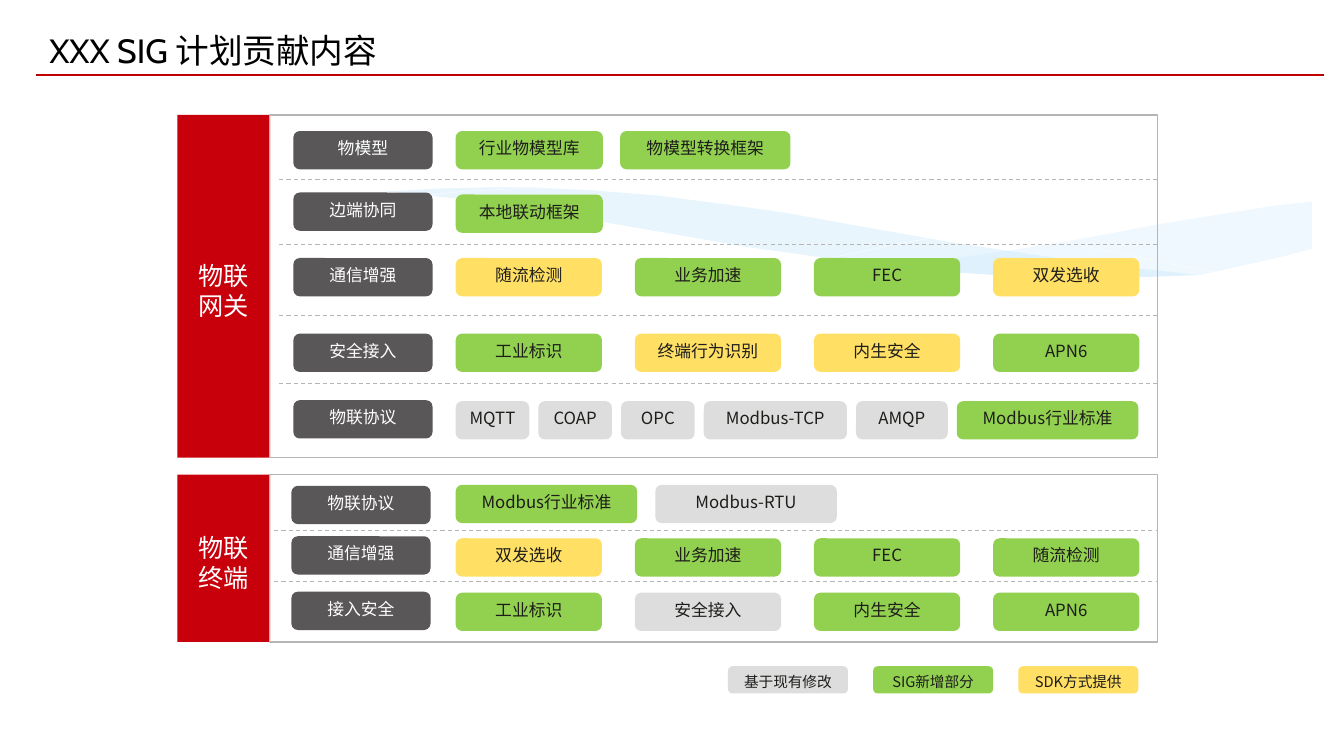
from lxml.etree import SubElement
from pptx import Presentation
from pptx.dml.color import RGBColor
from pptx.enum.dml import MSO_LINE
from pptx.enum.shapes import MSO_CONNECTOR, MSO_SHAPE
from pptx.enum.text import MSO_ANCHOR, PP_ALIGN
from pptx.oxml.ns import qn
from pptx.util import Inches, Pt

THEME = {
    "red": "C7000B", "rule": "C00000", "label": "595757", "border": "B5B5B5",
    "existing": "DDDDDD", "new": "92D050", "sdk": "FFDF64", "wave": "C6E7FC",
    "white": "FFFFFF", "ink": "1D1D1A", "black": "000000",
    "title_size": 24, "group_size": 18, "pill_size": 12, "legend_size": 10.5,
    "font": "Noto Sans CJK SC", "title_font": "Cabin",
}

# Grid: group column, panel, label column and item columns
GROUP_LEFT, PANEL_LEFT, PANEL_RIGHT = 1.76, 2.67, 11.48
ITEM_LEFT, ITEM_RIGHT, ITEM_WIDTH = 4.52, 11.3, 1.45
ITEM_GAP = (ITEM_RIGHT - ITEM_LEFT - 4 * ITEM_WIDTH) / 3
LABEL_WIDTH, PILL_HEIGHT = 1.38, 0.38

presentation = Presentation()
presentation.slide_width, presentation.slide_height = Inches(13.33), Inches(7.5)
slide = presentation.slides.add_slide(presentation.slide_layouts[6])


def add_block(kind, box, fill, text, size, color="ink", font="font"):
    """Add a text box (kind None) or a filled shape with styled text."""
    box = [Inches(length) for length in box]
    if kind is None:
        shape = slide.shapes.add_textbox(*box)
    else:
        shape = slide.shapes.add_shape(kind, *box)
        shape.shadow.inherit = False
        shape.fill.solid()
        shape.fill.fore_color.rgb = RGBColor.from_string(THEME[fill])
        shape.line.fill.background()
    frame = shape.text_frame
    frame.text = text
    frame.word_wrap = True
    frame.vertical_anchor = MSO_ANCHOR.TOP
    for paragraph in frame.paragraphs:
        paragraph.alignment = PP_ALIGN.LEFT if kind is None else PP_ALIGN.CENTER
        for run in paragraph.runs:
            run.font.size = Pt(THEME[size])
            run.font.name = THEME[font]
            run.font.color.rgb = RGBColor.from_string(THEME[color])
            SubElement(run.font._element, qn("a:ea"), typeface=THEME["font"])
    return shape


def add_rule(left, right, top, color, width):
    """Add a horizontal line."""
    line = slide.shapes.add_connector(
        MSO_CONNECTOR.STRAIGHT, Inches(left), Inches(top), Inches(right), Inches(top))
    SubElement(line._element.spPr, qn("a:effectLst"))
    line.line.color.rgb = RGBColor.from_string(THEME[color])
    line.line.width = Pt(width)
    return line


# Background waves: both bands rest on the same lower edge
lower_edge = [
    (0.31, 2.13), (0.61, 2.03), (1.13, 1.93), (1.76, 1.86), (2.35, 1.84), (3.06, 1.85),
    (3.82, 1.9), (4.53, 1.97), (5.21, 2.07), (5.96, 2.2), (6.71, 2.33), (7.4, 2.45),
    (8.04, 2.54), (8.82, 2.65), (9.44, 2.7), (10.15, 2.75), (10.78, 2.77), (11.34, 2.75),
    (11.9, 2.73), (12.4, 2.62), (12.79, 2.53), (13.01, 2.47)]
right_band = lower_edge[13:] + [
    (13.01, 2), (12.65, 2.04), (12.08, 2.13), (11.47, 2.23), (10.73, 2.37),
    (10.05, 2.48), (9.41, 2.57)]
left_band = lower_edge[6:19] + [
    (11.16, 2.65), (10.34, 2.54), (9.41, 2.4), (8.39, 2.22), (7.78, 2.11), (7.21, 2.03),
    (6.52, 1.94), (5.89, 1.89), (5.32, 1.86), (4.82, 1.86), (4.37, 1.87)]
left_streak = [
    (4.12, 1.95), (4.58, 1.9), (5.16, 1.87), (5.77, 1.87), (6.52, 1.9), (7.42, 1.97),
    (8.11, 2.04), (8.86, 2.13), (9.7, 2.26), (10.6, 2.41), (11.58, 2.61), (12.1, 2.71)]
right_streak = [
    (8.18, 2.57), (8.96, 2.41), (9.97, 2.23), (10.75, 2.1), (11.55, 1.99),
    (12.32, 1.9), (13, 1.85)]
ground = lower_edge + [(13.01, 3.29), (0.31, 3.29)]

for points, fill, opacity in [
        (right_band, "wave", 29), (left_band, "wave", 40),
        (left_streak, None, 100), (right_streak, None, 100), (ground, "white", 100)]:
    points = [(Inches(x), Inches(y)) for x, y in points]
    builder = slide.shapes.build_freeform(*points[0])
    builder.add_line_segments(points[1:], close=fill is not None)
    wave = builder.convert_to_shape()
    wave.shadow.inherit = False
    if fill is None:
        wave.fill.background()
        wave.line.color.rgb = RGBColor.from_string(THEME["white"])
        wave.line.width = Pt(0.25)
    else:
        wave.fill.solid()
        wave.fill.fore_color.rgb = RGBColor.from_string(THEME[fill])
        wave.line.fill.background()
        color = wave._element.spPr.find(qn("a:solidFill"))[0]
        SubElement(color, qn("a:alpha"), val=str(opacity * 1000))

# Title
add_rule(0.36, 13.13, 0.74, "rule", 1.5)
add_block(None, (0.39, 0.25, 6.82, 0.5), None, "XXX SIG 计划贡献内容",
          "title_size", "black", "title_font")

# Groups: name, top, height, label left, divider left, divider tops, rows
# Row: label, label top, item top, gap, items (text, kind, width)
W = ITEM_WIDTH
groups = [
    ("物联\n网关", 1.14, 3.4, 2.91, 2.77, [1.78, 2.43, 3.13, 3.8], [
        ("物模型", 1.3, 1.3, 0.17,
         [("行业物模型库", "new", 1.46), ("物模型转换框架", "new", 1.69)]),
        ("边端协同", 1.91, 1.93, ITEM_GAP, [("本地联动框架", "new", 1.46)]),
        ("通信增强", 2.56, 2.56, ITEM_GAP,
         [("随流检测", "sdk", W), ("业务加速", "new", W),
          ("FEC", "new", W), ("双发选收", "sdk", W)]),
        ("安全接入", 3.31, 3.31, ITEM_GAP,
         [("工业标识", "new", W), ("终端行为识别", "sdk", W),
          ("内生安全", "sdk", W), ("APN6", "new", W)]),
        ("物联协议", 3.97, 3.98, 0.09,
         [("MQTT", "existing", 0.73), ("COAP", "existing", 0.73),
          ("OPC", "existing", 0.73), ("Modbus-TCP", "existing", 1.42),
          ("AMQP", "existing", 0.91), ("Modbus行业标准", "new", 1.8)]),
    ]),
    ("物联\n终端", 4.71, 1.66, 2.89, 2.72, [5.26, 5.77], [
        ("物联协议", 4.82, 4.81, 0.18,
         [("Modbus行业标准", "new", 1.8), ("Modbus-RTU", "existing", 1.8)]),
        ("通信增强", 5.32, 5.34, ITEM_GAP,
         [("双发选收", "sdk", W), ("业务加速", "new", W),
          ("FEC", "new", W), ("随流检测", "new", W)]),
        ("接入安全", 5.87, 5.88, ITEM_GAP,
         [("工业标识", "new", W), ("安全接入", "existing", W),
          ("内生安全", "new", W), ("APN6", "new", W)]),
    ]),
]

for name, top, height, label_left, divider_left, dividers, rows in groups:
    # Red group name and outlined panel
    group = add_block(MSO_SHAPE.RECTANGLE, (GROUP_LEFT, top, 0.92, height),
                      "red", name, "group_size", "white")
    frame = group.text_frame
    frame.vertical_anchor = MSO_ANCHOR.MIDDLE
    frame.margin_left = frame.margin_right = frame.margin_top = Inches(0.08)
    frame.margin_bottom = 0
    panel = slide.shapes.add_shape(
        MSO_SHAPE.RECTANGLE, Inches(PANEL_LEFT), Inches(top),
        Inches(PANEL_RIGHT - PANEL_LEFT), Inches(height))
    panel.shadow.inherit = False
    panel.fill.background()
    panel.line.color.rgb = RGBColor.from_string(THEME["border"])
    panel.line.width = Pt(1)

    # Dashed dividers
    for divider_top in dividers:
        divider = add_rule(divider_left, PANEL_RIGHT, divider_top, "border", 0.75)
        divider.line.dash_style = MSO_LINE.DASH

    # Row labels and items, flowing left to right
    for label, label_top, item_top, gap, items in rows:
        add_block(MSO_SHAPE.ROUNDED_RECTANGLE,
                  (label_left, label_top, LABEL_WIDTH, PILL_HEIGHT),
                  "label", label, "pill_size", "white")
        left = ITEM_LEFT
        for text, kind, width in items:
            item = add_block(MSO_SHAPE.ROUNDED_RECTANGLE,
                             (left, item_top, width, PILL_HEIGHT), kind, text, "pill_size")
            item.text_frame.margin_left = item.text_frame.margin_right = Inches(0.04)
            left += width + gap

# Legend
for index, (text, kind) in enumerate([
        ("基于现有修改", "existing"), ("SIG新增部分", "new"), ("SDK方式提供", "sdk")]):
    add_block(MSO_SHAPE.ROUNDED_RECTANGLE, (7.22 + 1.44 * index, 6.61, 1.19, 0.27),
              kind, text, "legend_size")

presentation.save("out.pptx")
